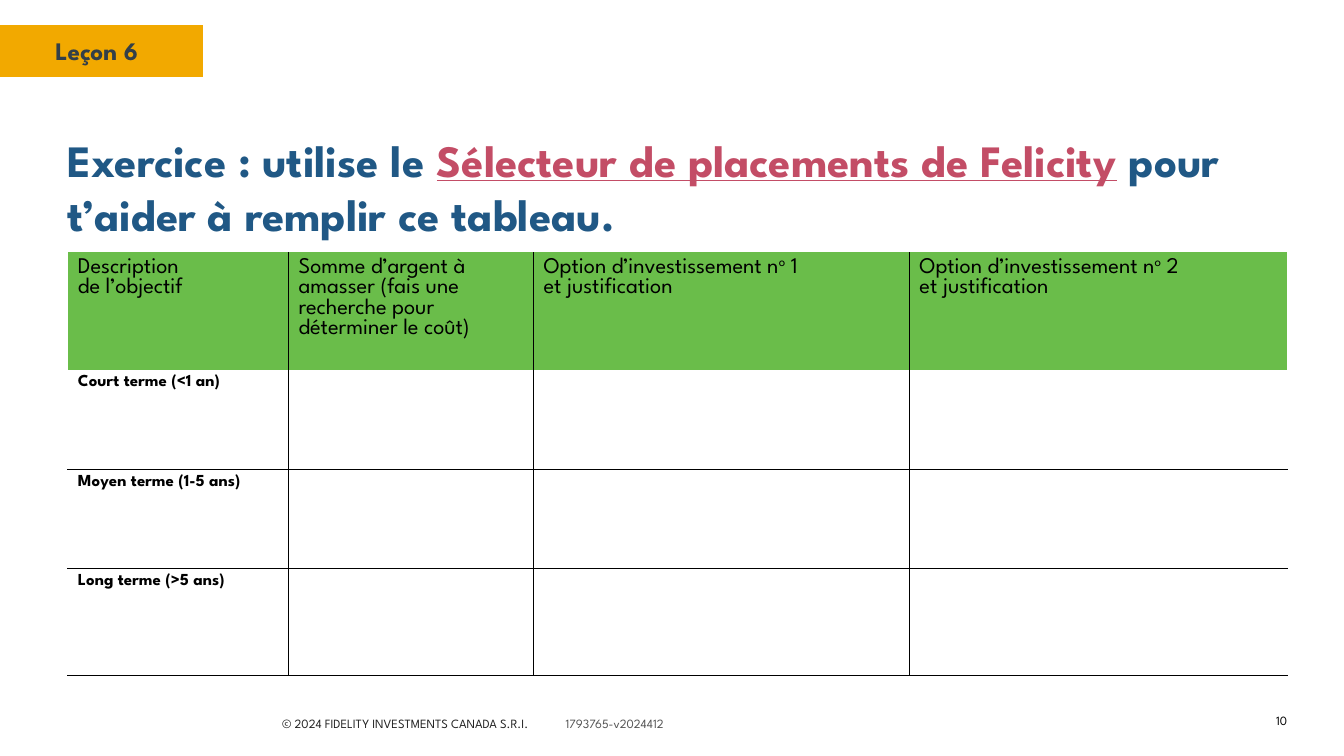
import dataclasses

import lxml.etree
import pptx
import pptx.dml.color
import pptx.enum.shapes
import pptx.enum.text
import pptx.oxml.ns
import pptx.util

Pt = pptx.util.Pt
Align = pptx.enum.text.PP_ALIGN
Anchor = pptx.enum.text.MSO_ANCHOR
qn = pptx.oxml.ns.qn


@dataclasses.dataclass
class Theme:
    face: str = "League Spartan"
    gold: str = "F2A900"
    slate: str = "333F48"
    blue: str = "205885"
    rose: str = "C34D66"
    green: str = "6ABD4A"
    black: str = "000000"
    white: str = "FFFFFF"
    ink: str = "222222"
    gray: str = "545454"
    title: int = 32
    lesson: int = 18
    head: int = 16
    label: int = 12
    small: int = 9


def rgb(code):
    return pptx.dml.color.RGBColor.from_string(code)


def write(par, text, *, face, size, color, bold=False, under=False, raised=False):
    for i, line in enumerate(text.split("\n")):
        if i:
            par.add_line_break()
        run = par.add_run()
        run.text = line
        font = run.font
        font.name, font.size, font.bold = face, Pt(size), bold
        font.underline = under
        font.color.rgb = rgb(color)
        if raised:
            run._r.get_or_add_rPr().set("baseline", "30000")


class Board:
    def __init__(self, slide, theme):
        self.slide, self.theme = slide, theme

    def fill(self, par, parts, **base):
        for text, extra in parts:
            write(par, text, **({"face": self.theme.face} | base | extra))

    def block(self, x, y, w, h, color):
        box = self.slide.shapes.add_shape(
            pptx.enum.shapes.MSO_SHAPE.RECTANGLE, Pt(x), Pt(y), Pt(w), Pt(h))
        box.shadow.inherit = False
        box.fill.solid()
        box.fill.fore_color.rgb = rgb(color)
        box.line.fill.background()

    def label(self, x, y, w, h, parts, align=Align.LEFT, anchor=Anchor.TOP,
              tab=None, **base):
        box = self.slide.shapes.add_textbox(Pt(x), Pt(y), Pt(w), Pt(h))
        frame = box.text_frame
        frame.word_wrap = True
        frame.vertical_anchor = anchor
        par = frame.paragraphs[0]
        par.alignment = align
        if tab:
            stops = lxml.etree.SubElement(par._p.get_or_add_pPr(), qn("a:tabLst"))
            lxml.etree.SubElement(stops, qn("a:tab"), pos=str(Pt(tab)), algn="l")
        self.fill(par, parts, **base)

    def edges(self, cell, colors):
        props = cell._tc.get_or_add_tcPr()
        for i, (side, color) in enumerate(zip("LRTB", colors)):
            line = lxml.etree.Element(qn(f"a:ln{side}"), w=str(Pt(1)))
            if color:
                paint = lxml.etree.SubElement(line, qn("a:solidFill"))
                lxml.etree.SubElement(paint, qn("a:srgbClr"), val=color)
            else:
                lxml.etree.SubElement(line, qn("a:noFill"))
            props.insert(i, line)

    def table(self, x, y, cols, rows, heads, labels):
        look = self.theme
        grid = self.slide.shapes.add_table(
            len(rows), len(cols), Pt(x), Pt(y), Pt(sum(cols)), Pt(sum(rows))).table
        grid.first_row = grid.horz_banding = False
        for col, width in zip(grid.columns, cols):
            col.width = Pt(width)
        for row, height in zip(grid.rows, rows):
            row.height = Pt(height)
        for r in range(len(rows)):
            for c in range(len(cols)):
                cell = grid.cell(r, c)
                par = cell.text_frame.paragraphs[0]
                if r == 0:
                    cell.fill.solid()
                    cell.fill.fore_color.rgb = rgb(look.green)
                    self.fill(par, heads[c], size=look.head, color=look.black)
                else:
                    cell.fill.background()
                    if c == 0:
                        self.fill(par, [(labels[r - 1], {})], size=look.label,
                                  color=look.black, bold=True)
                outer = look.white if r else None
                self.edges(cell, (
                    look.black if c else outer,
                    look.black if c < len(cols) - 1 else outer,
                    look.black if r > 1 else None,
                    look.black if r else None))


def option(number):
    return [("Option d’investissement n", {}), ("o", {"raised": True}),
            (f" {number} \net justification", {})]


def main():
    deck = pptx.Presentation()
    deck.slide_width, deck.slide_height = Pt(960), Pt(540)
    look = Theme()
    board = Board(deck.slides.add_slide(deck.slide_layouts[6]), look)

    board.block(0, 18, 145, 37, look.gold)
    board.label(32.4, 21.7, 94.3, 29, [("Leçon 6", {})],
                size=look.lesson, color=look.slate, bold=True)
    board.label(194.4, 507.7, 314.6, 18,
                [("© 2024 FIDELITY INVESTMENTS CANADA S.R.I.\t", {}),
                 ("1793765-v2024412", {"color": look.gray})],
                tab=202.5, size=look.small, color=look.ink)
    board.label(41, 91.4, 878.4, 84.2,
                [("Exercice : utilise le ", {}),
                 ("Sélecteur de placements de Felicity",
                  {"color": look.rose, "under": True}),
                 (" pour t’aider à remplir ce tableau.", {})],
                size=look.title, color=look.blue, bold=True)
    board.label(876.2, 508.3, 50.4, 13, [("10", {})], align=Align.RIGHT,
                anchor=Anchor.MIDDLE, size=look.small, color=look.black)
    board.table(48.5, 180.3, [157.6, 175, 268.5, 270], [49, 71, 71, 76.3],
                [[("Description \nde l’objectif", {})],
                 [("Somme d’argent à amasser (fais une recherche pour "
                   "déterminer le coût)", {})],
                 option(1), option(2)],
                ["Court terme (<1 an)", "Moyen terme (1-5 ans)",
                 "Long terme (>5 ans)"])
    deck.save("out.pptx")


if __name__ == "__main__":
    main()
